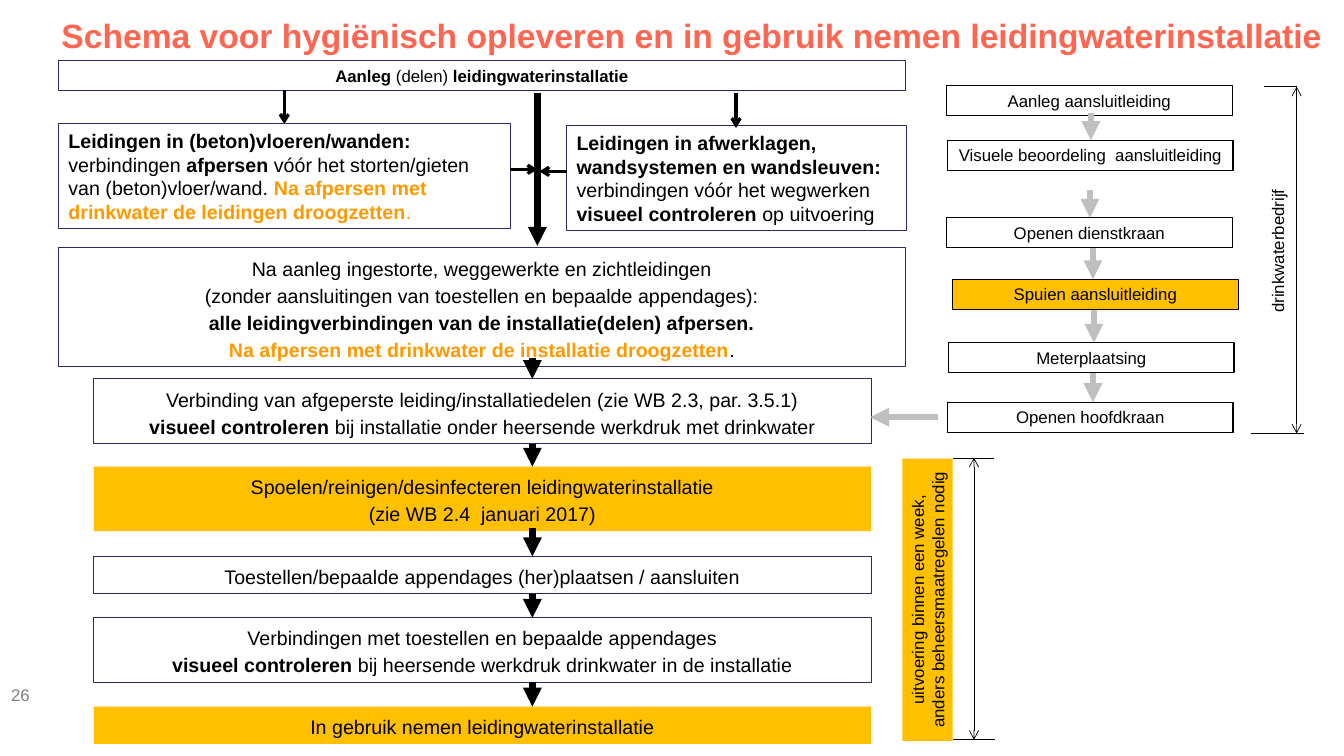
from lxml import etree
from pptx import Presentation
from pptx import util as u
from pptx.dml.color import RGBColor
from pptx.enum import shapes, text
from pptx.oxml.ns import qn

COLORS = {"black": "000000", "coral": "FF6651", "orange": "FF9900", "amber": "FFC000",
          "purple": "372462", "silver": "BFBFBF", "gray": "808080"}

# Content: a line is a list of (text, style); styles: "" plain, "b" bold, "o" orange, "ob" both
TITLE = "Schema voor hygiënisch opleveren en in gebruik nemen leidingwaterinstallatie"
PAGE = "26"
START = [[("Aanleg ", "b"), ("(delen) ", ""), ("leidingwaterinstallatie", "b")]]
FLOORS = [
    [("Leidingen in (beton)vloeren/wanden:", "b")],
    [("verbindingen ", ""), ("afpersen", "b"),
     (" vóór het storten/gieten van (beton)vloer/wand. ", ""),
     ("Na afpersen met drinkwater de leidingen droogzetten", "ob"), (".", "o")],
]
FINISHES = [
    [("Leidingen in afwerklagen, wandsystemen en wandsleuven: ", "b"),
     ("verbindingen vóór het wegwerken ", ""), ("visueel controleren ", "b"),
     ("op uitvoering", "")],
]
# Main flow: left, top, width, height, filled, start of the arrow to the next step, lines
STEPS = [
    (0.58, 2.46, 8.4, 1.18, False, 3.55, [
        [("Na aanleg ingestorte, weggewerkte en zichtleidingen", "")],
        [("(zonder aansluitingen van toestellen en bepaalde appendages):", "")],
        [("alle leidingverbindingen van de installatie(delen) afpersen.", "b")],
        [("Na afpersen met drinkwater de installatie droogzetten", "ob"), (".", "")]]),
    (0.93, 3.76, 7.71, 0.64, False, 4.4, [
        [("Verbinding van afgeperste leiding/installatiedelen (zie WB 2.3, par. 3.5.1)", "")],
        [("visueel controleren ", "b"),
         ("bij installatie onder heersende werkdruk met drinkwater", "")]]),
    (0.93, 4.63, 7.71, 0.64, True, 5.24, [
        [("Spoelen/reinigen/desinfecteren leidingwaterinstallatie", "")],
        [("(zie WB 2.4  januari 2017)", "")]]),
    (0.93, 5.52, 7.71, 0.37, False, 5.89, [
        [("Toestellen/bepaalde appendages (her)plaatsen / aansluiten", "")]]),
    (0.93, 6.13, 7.71, 0.64, False, 6.77, [
        [("Verbindingen met toestellen en bepaalde appendages", "")],
        [("visueel controleren ", "b"),
         ("bij heersende werkdruk drinkwater in de installatie", "")]]),
    (0.93, 7.01, 7.71, 0.37, True, None, [
        [("In gebruik nemen leidingwaterinstallatie", "")]]),
]
# Supply company: left, top, filled, x and start of the arrow to the next step, text
SUPPLY = [
    (9.39, 0.85, False, 10.82, 1.12, "Aanleg aansluitleiding"),
    (9.4, 1.39, False, 10.81, 1.89, "Visuele beoordeling  aansluitleiding"),
    (9.39, 2.16, False, 10.84, 2.46, "Openen dienstkraan"),
    (9.45, 2.77, True, 10.85, 3.08, "Spuien aansluitleiding"),
    (9.41, 3.4, False, 10.84, 3.7, "Meterplaatsing"),
    (9.4, 3.99, False, None, None, "Openen hoofdkraan"),
]
COMPANY = "drinkwaterbedrijf"
DEADLINE = ["uitvoering binnen een week,", "anders beheersmaatregelen nodig"]
MAIN_X = 5.28
SPINE = (5.33, 0.92, 5.33, 2.44)
BRANCHES = [(2.82, 0.89, 2.82, 1.23), (7.3, 0.92, 7.3, 1.27),
            (5.06, 1.68, 5.33, 1.68), (5.62, 1.7, 5.35, 1.7)]
INLET = (9.3, 4.14, 8.63, 4.14)
SPANS = [(12.86, 0.86, 12.86, 4.3), (9.66, 4.54, 9.66, 7.34)]
SPAN_ENDS = [(12.54, 0.86, 12.86, 0.86), (12.41, 4.3, 12.93, 4.3),
             (9.45, 4.55, 9.86, 4.55), (9.45, 7.34, 9.87, 7.34)]

prs = Presentation()
prs.slide_width, prs.slide_height = u.Inches(13.33), u.Inches(7.5)
slide = prs.slides.add_slide(prs.slide_layouts[5])


def rgb(name):
    return RGBColor.from_string(COLORS[name])


def write(shape, lines, size=14, color="black", align="LEFT", spacing=None,
          anchor="TOP", wrap=True, inset=None):
    frame = shape.text_frame
    frame.word_wrap = wrap
    frame.auto_size = text.MSO_AUTO_SIZE.NONE
    frame.vertical_anchor = text.MSO_ANCHOR[anchor]
    if inset is not None:
        frame.margin_left = frame.margin_right = u.Inches(inset)
        frame.margin_top = frame.margin_bottom = u.Inches(inset)
    for number, line in enumerate(lines):
        para = frame.add_paragraph() if number else frame.paragraphs[0]
        para.alignment = text.PP_ALIGN[align]
        if spacing:
            para.line_spacing = spacing
        for words, style in line:
            run = para.add_run()
            run.text = words
            run.font.name, run.font.size = "Arial", u.Pt(size)
            run.font.bold = "b" in style
            run.font.color.rgb = rgb("orange" if "o" in style else color)


def box(left, top, width, height, lines, fill=None, line=None, rotation=0, **form):
    shape = slide.shapes.add_shape(shapes.MSO_SHAPE.RECTANGLE,
                                   *map(u.Inches, (left, top, width, height)))
    shape.shadow.inherit = False
    shape.rotation = rotation
    if fill:
        shape.fill.solid()
        shape.fill.fore_color.rgb = rgb(fill)
    else:
        shape.fill.background()
    if line:
        shape.line.color.rgb = rgb(line)
        shape.line.width = u.Pt(0.75)
    else:
        shape.line.fill.background()
    write(shape, lines, **form)


def label(left, top, width, height, words, rotation=0, **form):
    area = slide.shapes.add_textbox(*map(u.Inches, (left, top, width, height)))
    area.rotation = rotation
    write(area, [[(words, "")]], **form)


def link(ends, width=4.5, color="black", head=None, tail="triangle"):
    line = slide.shapes.add_connector(shapes.MSO_CONNECTOR.STRAIGHT, *map(u.Inches, ends))
    line.line.color.rgb = rgb(color)
    line.line.width = u.Pt(width)
    for tag, kind in (("a:headEnd", head), ("a:tailEnd", tail)):
        if kind:
            etree.SubElement(line.line._ln, qn(tag), type=kind)
    etree.SubElement(line._element.spPr, qn("a:effectLst"))


# Title and page number
title = slide.shapes.title
title.left, title.top = u.Inches(0.51), u.Inches(0.1)
title.width, title.height = u.Inches(12.72), u.Inches(0.5)
write(title, [[(TITLE, "b")]], size=24, color="coral")
label(0.11, 6.69, 0.71, 0.4, PAGE, size=12, color="gray", anchor="MIDDLE", inset=0)

# Start and the two branches
box(0.58, 0.6, 8.4, 0.3, START, line="purple", size=12, align="CENTER")
box(0.58, 1.23, 4.48, 1.04, FLOORS, line="purple")
box(5.62, 1.25, 3.37, 1.04, FINISHES, line="purple")

# Main flow
for left, top, width, height, filled, start, lines in STEPS:
    box(left, top, width, height, lines, fill="amber" if filled else None,
        line=None if filled else "purple", align="CENTER", spacing=1.15)

# Supply company column
for left, top, filled, x, start, words in SUPPLY:
    box(left, top, 2.83, 0.3, [[(words, "")]], fill="amber" if filled else None,
        line="black", size=12, align="CENTER")

# Rotated side labels
label(11.93, 2.31, 1.48, 0.3, COMPANY, rotation=270, size=12, wrap=False)
box(7.8, 5.7, 2.8, 0.5, [[(words, "")] for words in DEADLINE], fill="amber",
    rotation=270, size=12, align="CENTER", wrap=False)

# Arrows between successive steps
for step, following in zip(STEPS, STEPS[1:]):
    link((MAIN_X, step[5], MAIN_X, following[1]))
for step, following in zip(SUPPLY, SUPPLY[1:]):
    link((step[3], step[4], step[3], following[1]), color="silver")
link(SPINE)
link(INLET, color="silver")
for ends in BRANCHES:
    link(ends, width=2.25, tail="arrow")

# Dimension lines
for ends in SPANS:
    link(ends, width=0.5, head="arrow", tail="arrow")
for ends in SPAN_ENDS:
    link(ends, width=0.5, tail=None)

prs.save("out.pptx")
